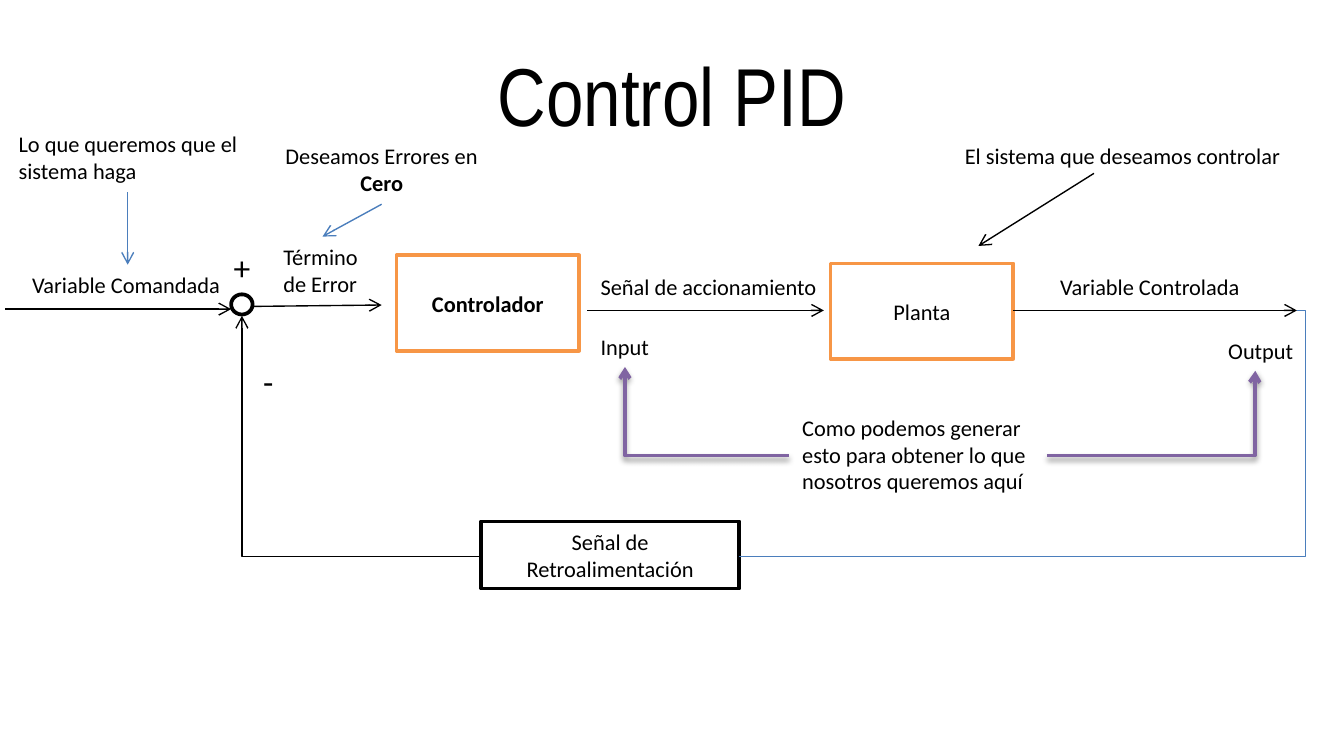
from dataclasses import dataclass

from lxml import etree
from pptx import Presentation
from pptx.dml.color import RGBColor
from pptx.enum.shapes import MSO_CONNECTOR, MSO_SHAPE
from pptx.enum.text import MSO_ANCHOR, MSO_AUTO_SIZE, PP_ALIGN
from pptx.oxml.ns import qn
from pptx.util import Inches, Pt

RECT, OVAL = MSO_SHAPE.RECTANGLE, MSO_SHAPE.OVAL
STRAIGHT, ELBOW = MSO_CONNECTOR.STRAIGHT, MSO_CONNECTOR.ELBOW
LEFT, CENTER = PP_ALIGN.LEFT, PP_ALIGN.CENTER
TOP, MIDDLE = MSO_ANCHOR.TOP, MSO_ANCHOR.MIDDLE
FIT, FIXED = MSO_AUTO_SIZE.SHAPE_TO_FIT_TEXT, MSO_AUTO_SIZE.NONE
WIDTH = Inches(10)
HEIGHT = WIDTH * 9 // 16
COLS, ROWS = 100, 56.25


@dataclass(frozen=True)
class Theme:
    ink: RGBColor = RGBColor.from_string("000000")
    paper: RGBColor = RGBColor.from_string("FFFFFF")
    orange: RGBColor = RGBColor.from_string("F79646")
    blue: RGBColor = RGBColor.from_string("4B7EBC")
    purple: RGBColor = RGBColor.from_string("8064A2")
    title_font: str = "Arial Narrow"
    body_font: str = "Calibri"
    title_size: int = 44
    sign_size: int = 18
    body_size: int = 12
    thin: float = 0.75
    thick: float = 2


THEME = Theme()


def place(*cells):
    scales = (WIDTH / COLS, HEIGHT / ROWS) * 2
    return [round(cell * scale) for cell, scale in zip(cells, scales)]


def apply(target, values):
    for name, value in values.items():
        setattr(target, name, value)


def write(tf, runs, size=THEME.body_size, font=THEME.body_font,
          align=LEFT, anchor=TOP, wrap=True, fit=FIT):
    apply(tf, {"word_wrap": wrap, "auto_size": fit, "vertical_anchor": anchor})
    p = tf.paragraphs[0]
    p.alignment = align
    for text, bold in runs:
        r = p.add_run()
        r.text = text
        apply(r.font, {"size": Pt(size), "name": font, "bold": bold})
        r.font.color.rgb = THEME.ink


def add_title(s, text):
    title = s.shapes.title
    x, y, w, h = place(0, 2.3, COLS, 9.4)
    apply(title, {"left": x, "top": y, "width": w, "height": h})
    write(title.text_frame, [(text, False)], THEME.title_size, THEME.title_font,
          CENTER, MIDDLE, fit=FIXED)


def add_label(s, box, *runs, **style):
    sp = s.shapes.add_textbox(*place(*box))
    write(sp.text_frame, runs, **style)


def add_block(s, box, color, kind=RECT, runs=(), **style):
    sp = s.shapes.add_shape(kind, *place(*box))
    sp.shadow.inherit = False
    sp.fill.solid()
    sp.fill.fore_color.rgb = THEME.paper
    sp.line.color.rgb = color
    sp.line.width = Pt(THEME.thick)
    if runs:
        write(sp.text_frame, runs, align=CENTER, **style)


def add_shadow(effects):
    shadow = etree.SubElement(effects, qn("a:outerShdw"), blurRad=str(Pt(3.1)),
                              dist=str(Pt(1.6)), dir="5400000", rotWithShape="0")
    color = etree.SubElement(shadow, qn("a:srgbClr"), val=str(THEME.ink))
    etree.SubElement(color, qn("a:alpha"), val="38000")


def add_line(s, start, end, color=THEME.ink, width=THEME.thin,
             kind=STRAIGHT, arrow=True, shadow=False):
    line = s.shapes.add_connector(kind, *place(*start, *end))
    line.line.color.rgb = color
    line.line.width = Pt(width)
    if arrow:
        etree.SubElement(line.line._get_or_add_ln(), qn("a:tailEnd"), type="arrow")
    effects = etree.SubElement(line._element.spPr, qn("a:effectLst"))
    if shadow:
        add_shadow(effects)
    return line


def add_corner(s, start, end, **style):
    line = add_line(s, end, start, kind=ELBOW, **style)
    spPr = line._element.spPr
    spPr.find(qn("a:prstGeom")).set("prst", "bentConnector2")
    spPr.find(qn("a:xfrm")).set("rot", "10800000")


def add_elbow(s, start, end, bend, **style):
    line = add_line(s, start, end, kind=ELBOW, **style)
    guides = line._element.spPr.find(qn("a:prstGeom")).get_or_add_avLst()
    etree.SubElement(guides, qn("a:gd"), name="adj1", fmla=f"val {round(bend * 1000)}")


def add_plant(s):
    add_block(s, (61.8, 19.6, 13.6, 7.1), THEME.orange,
              runs=[("Planta", False)], anchor=MIDDLE, fit=FIXED)
    add_label(s, (70.8, 10.1, 25.8, 3), ("El sistema que deseamos controlar", False),
              wrap=False)
    add_line(s, (81.4, 12.9), (72.8, 18.3))
    for left, right in [(75.4, 96.5), (43.7, 61.3)]:
        add_line(s, (left, 23.1), (right, 23.1))
    for box, text in [
        ((43.7, 19.8, 18.3, 3), "Señal de accionamiento"),
        ((77.9, 19.8, 15.5, 3), "Variable Controlada"),
        ((43.7, 24.3, 5.6, 3), "Input"),
        ((90.4, 24.6, 6.9, 3), "Output"),
    ]:
        add_label(s, box, (text, False), wrap=False)


def add_question(s):
    add_label(s, (58.7, 30.3, 19.2, 7.1),
              ("Como podemos generar esto para obtener lo que nosotros queremos aquí", False))
    style = {"color": THEME.purple, "width": THEME.thick, "shadow": True}
    add_corner(s, (58.7, 33.9), (46.5, 27.3), **style)
    add_elbow(s, (77.9, 33.9), (93.4, 27.6), 99.7, **style)


def add_reference(s):
    add_line(s, (0.4, 23), (17.2, 23))
    add_label(s, (1.4, 19.7, 16.1, 3), ("Variable Comandada", False), wrap=False)
    add_label(s, (0.4, 9.2, 19.2, 5), ("Lo que queremos que el sistema haga", False))
    add_line(s, (9.5, 14.3), (9.5, 19.7), THEME.blue)


def add_feedback(s):
    add_block(s, (35.8, 38.8, 19.2, 5), THEME.ink,
              runs=[("Señal de Retroalimentación", False)])
    add_elbow(s, (55, 41.4), (96.5, 23.1), 101.5, color=THEME.blue, arrow=False)
    add_corner(s, (35.8, 41.4), (18, 23.5))


def add_error(s):
    add_block(s, (17.2, 21.9, 1.6, 1.5), THEME.ink, OVAL)
    for box, sign in [((16.4, 17.9, 3.3, 4), "+"), ((18.6, 26.4, 2.8, 4), "-")]:
        add_label(s, box, (sign, False), size=THEME.sign_size, wrap=False)
    add_line(s, (18.8, 22.8), (28.4, 22.7))
    add_label(s, (20.1, 17.6, 7.9, 5), ("Término de Error", False))
    add_label(s, (18.8, 10.1, 19.2, 5), ("Deseamos Errores en ", False),
              ("Cero", True), align=CENTER)
    add_line(s, (28.4, 15.2), (24, 17.6), THEME.blue)
    add_block(s, (29.5, 19, 13.6, 7.1), THEME.orange,
              runs=[("Controlador", True)], anchor=MIDDLE, fit=FIXED)


def main():
    prs = Presentation()
    apply(prs, {"slide_width": WIDTH, "slide_height": HEIGHT})
    s = prs.slides.add_slide(prs.slide_layouts[5])
    add_title(s, "Control PID")
    for add_part in (add_plant, add_question, add_reference, add_feedback, add_error):
        add_part(s)
    prs.save("out.pptx")


if __name__ == "__main__":
    main()
